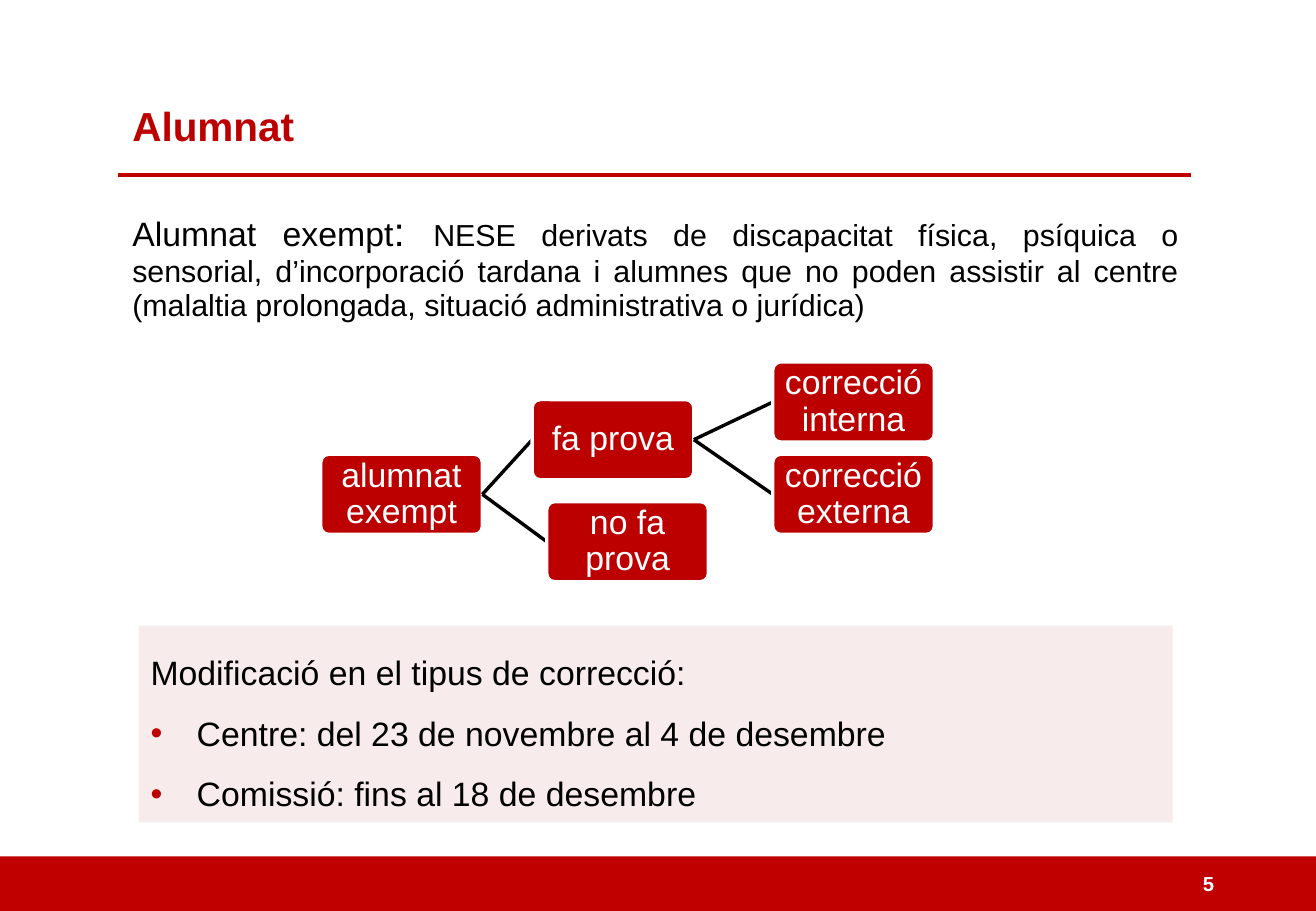
from dataclasses import dataclass

from lxml import etree
from pptx import Presentation
from pptx.dml.color import RGBColor
from pptx.enum.shapes import MSO_CONNECTOR, MSO_SHAPE
from pptx.enum.text import MSO_ANCHOR, PP_ALIGN
from pptx.oxml.ns import qn
from pptx.util import Inches, Pt

RECTANGLE, ROUNDED = MSO_SHAPE.RECTANGLE, MSO_SHAPE.ROUNDED_RECTANGLE
STRAIGHT = MSO_CONNECTOR.STRAIGHT
TOP, MIDDLE = MSO_ANCHOR.TOP, MSO_ANCHOR.MIDDLE
LEFT, CENTER, JUSTIFY = PP_ALIGN.LEFT, PP_ALIGN.CENTER, PP_ALIGN.JUSTIFY
LEFT_SIDE, RIGHT_SIDE = 1, 3


@dataclass(frozen=True)
class Theme:
    font: str = "Arial"
    bar: str = "C00000"
    accent: str = "BC0000"
    panel: str = "D99593"
    panel_alpha: int = 18
    ink: str = "000000"
    white: str = "FFFFFF"
    title: int = 24
    body: int = 20
    detail: int = 18
    number: int = 12


THEME = Theme()
NODE_WIDTH, NODE_HEIGHT = 1.33, 0.66

# Each node: text, left and top within the diagram, children
EXEMPT_TREE = ("alumnat exempt", 0, 0.76, [
    ("fa prova", 1.74, 0.31, [
        ("correcció interna", 3.72, 0, []),
        ("correcció externa", 3.72, 0.76, []),
    ]),
    ("no fa prova", 1.86, 1.15, []),
])


def color(value):
    return RGBColor.from_string(value)


def add_span(para, text, size, ink=THEME.ink, bold=False):
    span = para.add_run()
    span.text = text
    span.font.name = THEME.font
    span.font.size = Pt(size)
    span.font.bold = bold
    span.font.color.rgb = color(ink)


def prepare_frame(shape, anchor=TOP, inset_x=0.1, inset_y=0.05):
    frame = shape.text_frame
    frame.word_wrap = True
    frame.vertical_anchor = anchor
    frame.margin_left = frame.margin_right = Inches(inset_x)
    frame.margin_top = frame.margin_bottom = Inches(inset_y)
    return frame


def add_text_box(page, box, anchor=TOP):
    shape = page.shapes.add_textbox(*map(Inches, box))
    return prepare_frame(shape, anchor).paragraphs[0]


def add_block(page, kind, box, fill):
    block = page.shapes.add_shape(kind, *map(Inches, box))
    block.shadow.inherit = False
    block.fill.solid()
    block.fill.fore_color.rgb = color(fill)
    block.line.fill.background()
    return block


def add_line(page, start, end, ink, width):
    line = page.shapes.add_connector(STRAIGHT, *map(Inches, (*start, *end)))
    line.line.color.rgb = color(ink)
    line.line.width = Pt(width)
    etree.SubElement(line._element.spPr, qn("a:effectLst"))
    return line


def add_footer(page, box, number):
    left, top, width, height = box
    add_block(page, RECTANGLE, box, THEME.bar)
    para = add_text_box(page, (left + 9.8, top + 0.06, 0.91, 0.33), MIDDLE)
    add_span(para, number, THEME.number, THEME.white, bold=True)


def add_heading(page, box, text):
    left, top, width, height = box
    add_line(page, (left - 0.02, top + height + 0.05),
             (left + width, top + height + 0.05), THEME.bar, 2.25)
    add_span(add_text_box(page, box), text, THEME.title, THEME.accent, bold=True)


def add_definition(page, box):
    para = add_text_box(page, box)
    para.alignment = JUSTIFY
    para.line_spacing = 0.92
    add_span(para, "Alumnat exempt", THEME.body)
    add_span(para, ": ", THEME.title)
    add_span(para, "NESE derivats de discapacitat física, psíquica o sensorial, "
             "d’incorporació tardana i alumnes que no poden assistir al centre "
             "(malaltia prolongada, situació administrativa o jurídica)",
             THEME.detail)


def add_tree(page, origin, node):
    """Draw a node and its branches; each branch lies beneath its child."""
    text, dx, dy, children = node
    left, top = origin[0] + dx, origin[1] + dy
    block = add_block(page, ROUNDED, (left, top, NODE_WIDTH, NODE_HEIGHT), THEME.accent)
    block.adjustments[0] = 0.1
    block.line.color.rgb = color(THEME.white)
    block.line.width = Pt(2)
    para = prepare_frame(block, MIDDLE, 0.01, 0.01).paragraphs[0]
    para.alignment = CENTER
    para.line_spacing = 0.9
    add_span(para, text, THEME.body, THEME.white)

    start = (left + NODE_WIDTH, top + NODE_HEIGHT / 2)
    for child in children:
        end = (origin[0] + child[1], origin[1] + child[2] + NODE_HEIGHT / 2)
        branch = add_line(page, start, end, THEME.ink, 2)
        branch.begin_connect(block, RIGHT_SIDE)
        branch.end_connect(add_tree(page, origin, child), LEFT_SIDE)
    return block


def add_bullet(para):
    properties = para._p.get_or_add_pPr()
    properties.set("marL", str(Inches(0.38)))
    properties.set("indent", str(-Inches(0.38)))
    bullet_color = etree.SubElement(properties, qn("a:buClr"))
    etree.SubElement(bullet_color, qn("a:srgbClr")).set("val", THEME.accent)
    etree.SubElement(properties, qn("a:buFont")).set("typeface", THEME.font)
    etree.SubElement(properties, qn("a:buChar")).set("char", "•")


def add_changes_panel(page, box, lead, items):
    panel = add_block(page, RECTANGLE, box, THEME.panel)
    fill_color = panel._element.spPr.find(qn("a:solidFill"))[0]
    etree.SubElement(fill_color, qn("a:alpha")).set("val", str(THEME.panel_alpha * 1000))
    frame = prepare_frame(panel)
    for index, text in enumerate([lead, *items]):
        para = frame.add_paragraph() if index else frame.paragraphs[0]
        if index:
            add_bullet(para)
        para.alignment = LEFT
        para.line_spacing = 1.5
        add_span(para, text, THEME.body)


def build_students_slide(deck):
    page = deck.slides.add_slide(deck.slide_layouts[6])
    add_footer(page, (0, 7.05, 10.83, 0.45), "5")
    add_heading(page, (0.99, 0.78, 8.81, 0.61), "Alumnat")
    add_definition(page, (0.99, 1.69, 8.81, 1.03))
    add_tree(page, (2.64, 2.98), EXEMPT_TREE)
    add_changes_panel(page, (1.14, 5.15, 8.51, 1.62),
                      "Modificació en el tipus de correcció:",
                      ["Centre: del 23 de novembre al 4 de desembre",
                       "Comissió: fins al 18 de desembre"])


def main():
    deck = Presentation()
    deck.slide_width, deck.slide_height = Inches(10.83), Inches(7.5)
    build_students_slide(deck)
    deck.save("out.pptx")


if __name__ == "__main__":
    main()
